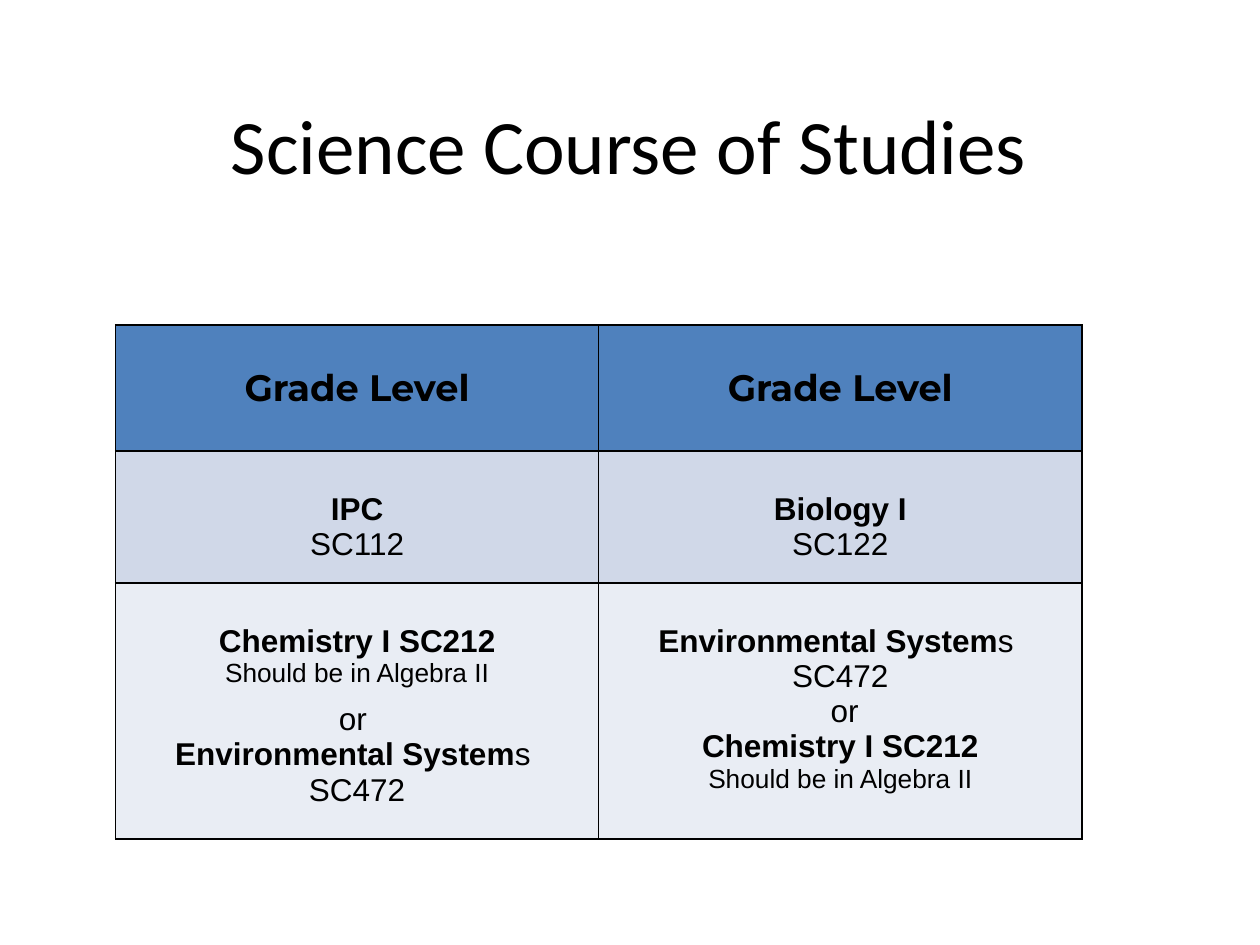
from lxml import etree
from pptx import Presentation
from pptx.dml.color import RGBColor
from pptx.enum.text import MSO_ANCHOR, PP_ALIGN
from pptx.oxml.ns import qn
from pptx.util import Cm, Pt

CENTER = PP_ALIGN.CENTER
MIDDLE = MSO_ANCHOR.MIDDLE
TOP = MSO_ANCHOR.TOP

BLACK = RGBColor(0x00, 0x00, 0x00)
HEADER_BLUE = RGBColor(0x4F, 0x81, 0xBD)
BAND_BLUE = RGBColor(0xD0, 0xD8, 0xE8)
PALE_BLUE = RGBColor(0xE9, 0xED, 0xF4)

BORDER_WIDTH = Pt(1)
COLUMN_WIDTH = Cm(9.74)
ROW_HEIGHTS = [Cm(2.54), Cm(2.66), Cm(5.16)]
ROW_FILLS = [HEADER_BLUE, BAND_BLUE, PALE_BLUE]

# Each paragraph is (runs, size, space before); each run is (text, bold)
HEADER = [([("Grade Level", True)], 21, 0)]
CHEMISTRY = [
    ([("Chemistry I SC212", True)], 18, 0),
    ([("Should be in Algebra II", False)], 15, 0),
]
ENVIRONMENT = [([("Environmental System", True), ("s  SC472", False)], 18, 0)]


def course(name, code):
    return [([(name, True)], 18, 0), ([(code, False)], 18, 0)]


def alternative(text, space_before):
    return [([(text, False)], 18, space_before)]


ROWS = [
    [HEADER, HEADER],
    [course("IPC", "SC112"), course("Biology I", "SC122")],
    [
        CHEMISTRY + alternative("or ", 8) + ENVIRONMENT,
        ENVIRONMENT + alternative(" or", 0) + CHEMISTRY,
    ],
]


def style_font(run, name, size, bold):
    run.font.name = name
    run.font.size = Pt(size)
    run.font.bold = bold
    run.font.color.rgb = BLACK


def add_title(slide, text):
    box = slide.shapes.add_textbox(Cm(1.85), Cm(1.7), Cm(21.67), Cm(2.39))
    frame = box.text_frame
    frame.word_wrap = True
    frame.vertical_anchor = MIDDLE
    frame.text = text
    paragraph = frame.paragraphs[0]
    paragraph.alignment = CENTER
    style_font(paragraph.runs[0], "Calibri", 44, False)


def set_borders(cell):
    properties = cell._tc.get_or_add_tcPr()
    for position, side in enumerate(("a:lnL", "a:lnR", "a:lnT", "a:lnB")):
        line = etree.Element(qn(side), w=str(BORDER_WIDTH))
        fill = etree.SubElement(line, qn("a:solidFill"))
        etree.SubElement(fill, qn("a:srgbClr"), val=str(BLACK))
        properties.insert(position, line)


def fill_cell(cell, paragraphs, color, is_header):
    cell.fill.solid()
    cell.fill.fore_color.rgb = color
    set_borders(cell)
    cell.vertical_anchor = MIDDLE if is_header else TOP
    cell.margin_left = cell.margin_right = Cm(0.18)
    cell.margin_top = Cm(0.1 if is_header else 0.82)
    cell.margin_bottom = Cm(0.1)
    font_name = "Montserrat" if is_header else "Arial"
    frame = cell.text_frame
    for index, (runs, size, space_before) in enumerate(paragraphs):
        paragraph = frame.add_paragraph() if index else frame.paragraphs[0]
        paragraph.alignment = CENTER
        paragraph.space_before = Pt(space_before)
        for text, bold in runs:
            run = paragraph.add_run()
            run.text = text
            style_font(run, font_name, size, bold)


def add_course_table(slide):
    frame = slide.shapes.add_table(
        len(ROWS), 2, Cm(2.33), Cm(6.55), COLUMN_WIDTH * 2, sum(ROW_HEIGHTS)
    )
    table = frame.table
    for column in table.columns:
        column.width = COLUMN_WIDTH
    for row_index, contents in enumerate(ROWS):
        table.rows[row_index].height = ROW_HEIGHTS[row_index]
        for column_index, paragraphs in enumerate(contents):
            cell = table.cell(row_index, column_index)
            fill_cell(cell, paragraphs, ROW_FILLS[row_index], row_index == 0)


def main():
    presentation = Presentation()
    presentation.slide_width = Cm(25.4)
    presentation.slide_height = Cm(19.05)
    slide = presentation.slides.add_slide(presentation.slide_layouts[6])
    add_title(slide, "Science Course of Studies")
    add_course_table(slide)
    presentation.save("out.pptx")


if __name__ == "__main__":
    main()
